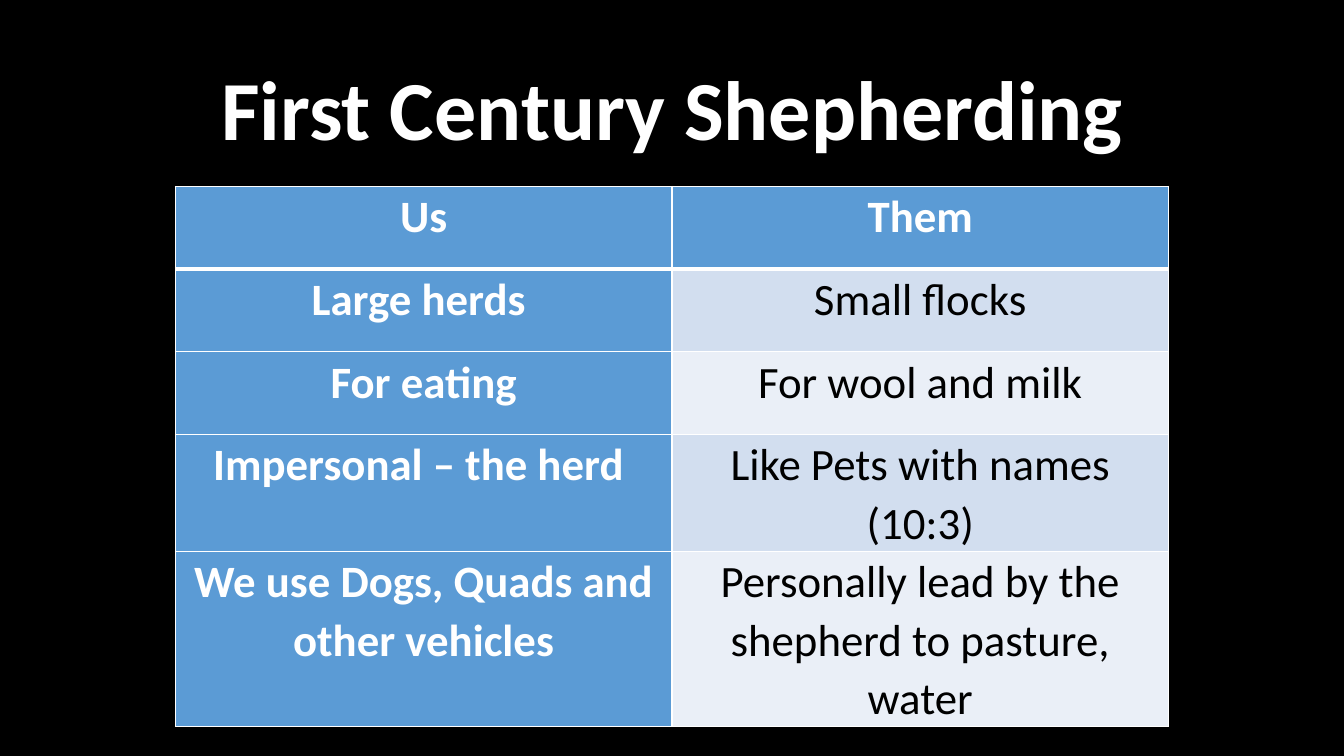
"""Build a slide that compares shepherding now and in the first century."""
from dataclasses import dataclass

import pptx
import pptx.dml.color
import pptx.enum.text
import pptx.oxml
import pptx.oxml.ns
import pptx.util

Inches = pptx.util.Inches
FONT = "Calibri"
COLORS = {
    "black": "000000",
    "white": "FFFFFF",
    "blue": "5B9BD5",
    "dark": "D2DEEF",
    "light": "EAEFF7",
}
COL_WIDE = 4.925


@dataclass
class Pair:
    us: str
    them: str
    high: float = 0.82


PAIRS = [
    Pair("Us", "Them"),
    Pair("Large herds ", "Small flocks"),
    Pair("For eating", "For wool and milk"),
    Pair("Impersonal – the herd ", "Like Pets with names (10:3)", 1.16),
    Pair("We use Dogs, Quads and other vehicles",
         "Personally lead by the shepherd to pasture, water", 1.74),
]


def color(name: str) -> pptx.dml.color.RGBColor:
    return pptx.dml.color.RGBColor.from_string(COLORS[name])


def write(frame, text: str, size: int, tint: str, bold: bool, space: float) -> None:
    frame.text = text
    line = frame.paragraphs[0]
    line.alignment = pptx.enum.text.PP_ALIGN.CENTER
    line.line_spacing = space
    font = line.runs[0].font
    font.name, font.size, font.bold = FONT, pptx.util.Pt(size), bold
    font.color.rgb = color(tint)


def border(cell, row: int) -> None:
    props = cell._tc.get_or_add_tcPr()
    widths = {"L": 1, "R": 1, "T": 3 if row == 1 else 1, "B": 3 if row == 0 else 1}
    for spot, (side, width) in enumerate(widths.items()):
        props.insert(spot, pptx.oxml.parse_xml(
            f'<a:ln{side} {pptx.oxml.ns.nsdecls("a")} w="{pptx.util.Pt(width)}">'
            f'<a:solidFill><a:srgbClr val="{COLORS["white"]}"/></a:solidFill>'
            f'</a:ln{side}>'))


def fill_cell(cell, text: str, row: int, col: int) -> None:
    head = row == 0 or col == 0
    band = "dark" if row % 2 else "light"
    cell.margin_left = cell.margin_right = Inches(0.07)
    cell.margin_top = cell.margin_bottom = 0
    write(cell.text_frame, text, 32, "white" if head else "black", head, 1.07)
    cell.fill.solid()
    cell.fill.fore_color.rgb = color("blue" if head else band)
    border(cell, row)


def add_title(slide) -> None:
    box = slide.shapes.add_textbox(Inches(0.92), Inches(0.4), Inches(11.5), Inches(1.45))
    frame = box.text_frame
    frame.word_wrap = True
    frame.vertical_anchor = pptx.enum.text.MSO_ANCHOR.MIDDLE
    write(frame, "First Century Shepherding", 60, "white", True, 0.9)


def add_grid(slide) -> None:
    grid = slide.shapes.add_table(
        len(PAIRS), 2, Inches(1.74), Inches(1.85),
        Inches(2 * COL_WIDE), Inches(sum(pair.high for pair in PAIRS))).table
    grid.first_col = True
    for row, pair in enumerate(PAIRS):
        grid.rows[row].height = Inches(pair.high)
        for col, text in enumerate((pair.us, pair.them)):
            fill_cell(grid.cell(row, col), text, row, col)


def main() -> None:
    deck = pptx.Presentation()
    deck.slide_width, deck.slide_height = Inches(13.33), Inches(7.5)
    slide = deck.slides.add_slide(deck.slide_layouts[6])
    slide.background.fill.solid()
    slide.background.fill.fore_color.rgb = color("black")
    add_title(slide)
    add_grid(slide)
    deck.save("out.pptx")


if __name__ == "__main__":
    main()
